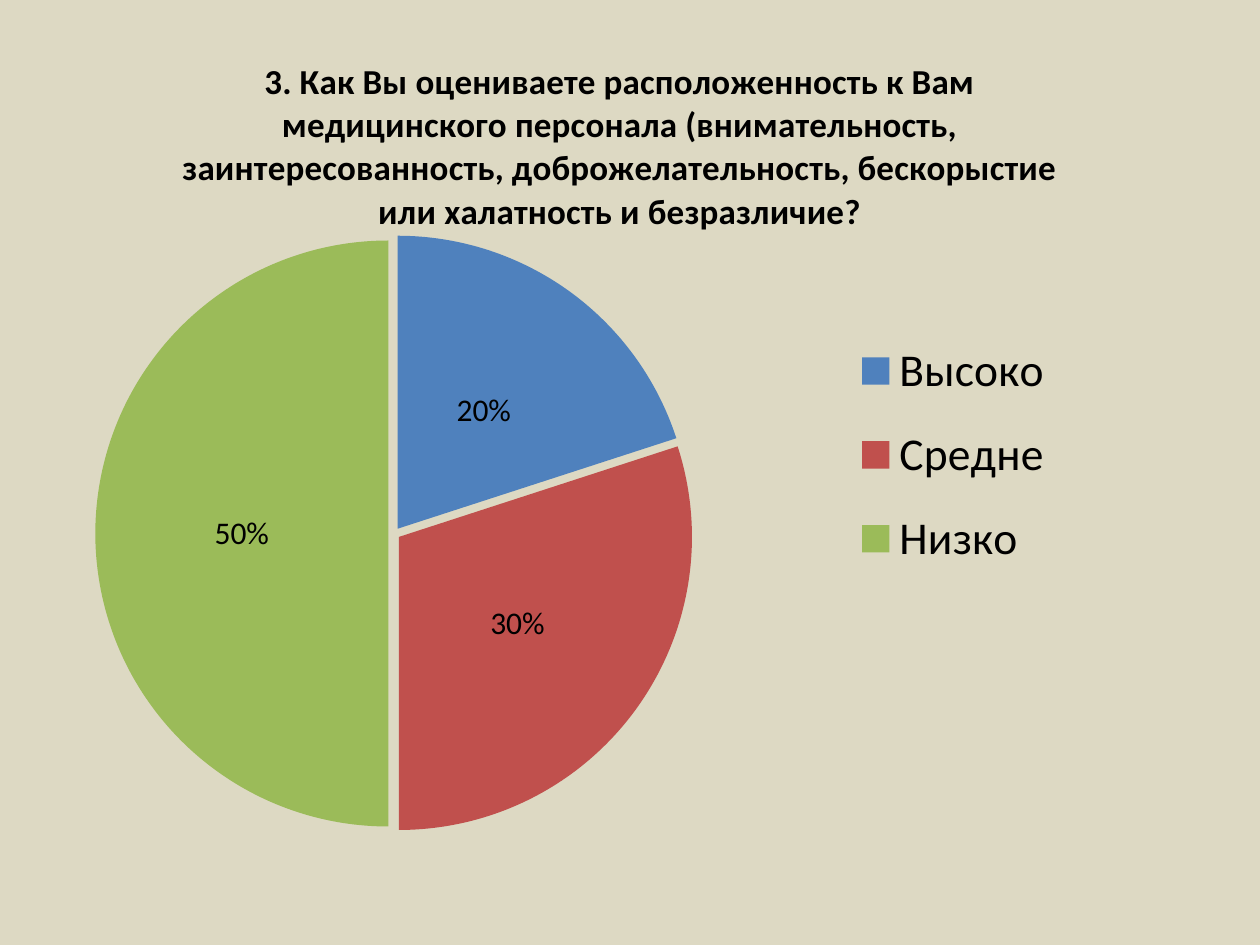
import lxml.etree
import pptx
import pptx.chart.data
import pptx.dml.color
import pptx.enum.chart
import pptx.oxml
import pptx.oxml.ns
import pptx.util

Inches, Pt = pptx.util.Inches, pptx.util.Pt
qn = pptx.oxml.ns.qn


def paint(fill, color):
    fill.solid()
    fill.fore_color.rgb = pptx.dml.color.RGBColor.from_string(color)


def set_layout(parent, after, **values):
    for old in parent.findall(qn("c:layout")):
        parent.remove(old)
    layout = lxml.etree.Element(qn("c:layout"))
    manual = lxml.etree.SubElement(layout, qn("c:manualLayout"))
    for name, value in values.items():
        lxml.etree.SubElement(manual, qn("c:" + name)).set("val", str(value))
    if after is None:
        parent.insert(0, layout)
    else:
        after.addnext(layout)


prs = pptx.Presentation()
prs.slide_width, prs.slide_height = Inches(10), Inches(7.5)
s = prs.slides.add_slide(prs.slide_layouts[6])
paint(s.background.fill, "DDD9C3")

data = pptx.chart.data.CategoryChartData(number_format="0%")
data.categories = ["Высоко", "Средне", "Низко "]
data.add_series("Series 1", [0.2, 0.3, 0.5])
chart = s.shapes.add_chart(
    pptx.enum.chart.XL_CHART_TYPE.PIE,
    Inches(0.51), Inches(0.21), Inches(8.82), Inches(6.54), data,
).chart
chart.font.name = "Calibri"
chart.font.size = Pt(18)
chart.font.color.rgb = pptx.dml.color.RGBColor.from_string("000000")

chart.has_title = True
chart.chart_title.include_in_layout = False
p = chart.chart_title.text_frame.paragraphs[0]
p.text = (
    "3. Как Вы оцениваете расположенность к Вам медицинского персонала "
    "(внимательность, заинтересованность, доброжелательность, бескорыстие "
    "или халатность и безразличие?"
)
p.font.name = "Calibri"
p.font.size = Pt(20)
p.font.bold = True

plot = chart.plots[0]
plot.vary_by_categories = True
plot.has_data_labels = True
labels = plot.data_labels
labels.show_value = True
labels.show_percentage = False
labels.number_format = "0%"
labels.number_format_is_linked = False
labels.position = pptx.enum.chart.XL_LABEL_POSITION.CENTER
labels.font.size = Pt(18)

series = plot.series[0]
for i, color in enumerate(["4F81BD", "C0504D", "9BBB59"]):
    paint(series.points[i].format.fill, color)
explosion = lxml.etree.Element(qn("c:explosion"))
explosion.set("val", "2")
series._element.find(qn("c:dPt")).addprevious(explosion)

chart.has_legend = True
legend = chart.legend
legend.position = pptx.enum.chart.XL_LEGEND_POSITION.RIGHT
legend.include_in_layout = False
legend.font.size = Pt(26)

set_layout(chart._chartSpace.chart.plotArea, None, layoutTarget="inner",
           xMode="edge", yMode="edge", x=0.028, y=0.252, w=0.538, h=0.727)
set_layout(legend._element, legend._element.find(qn("c:legendPos")),
           xMode="edge", yMode="edge", x=0.69, y=0.35, w=0.22, h=0.34)

prs.save("out.pptx")
